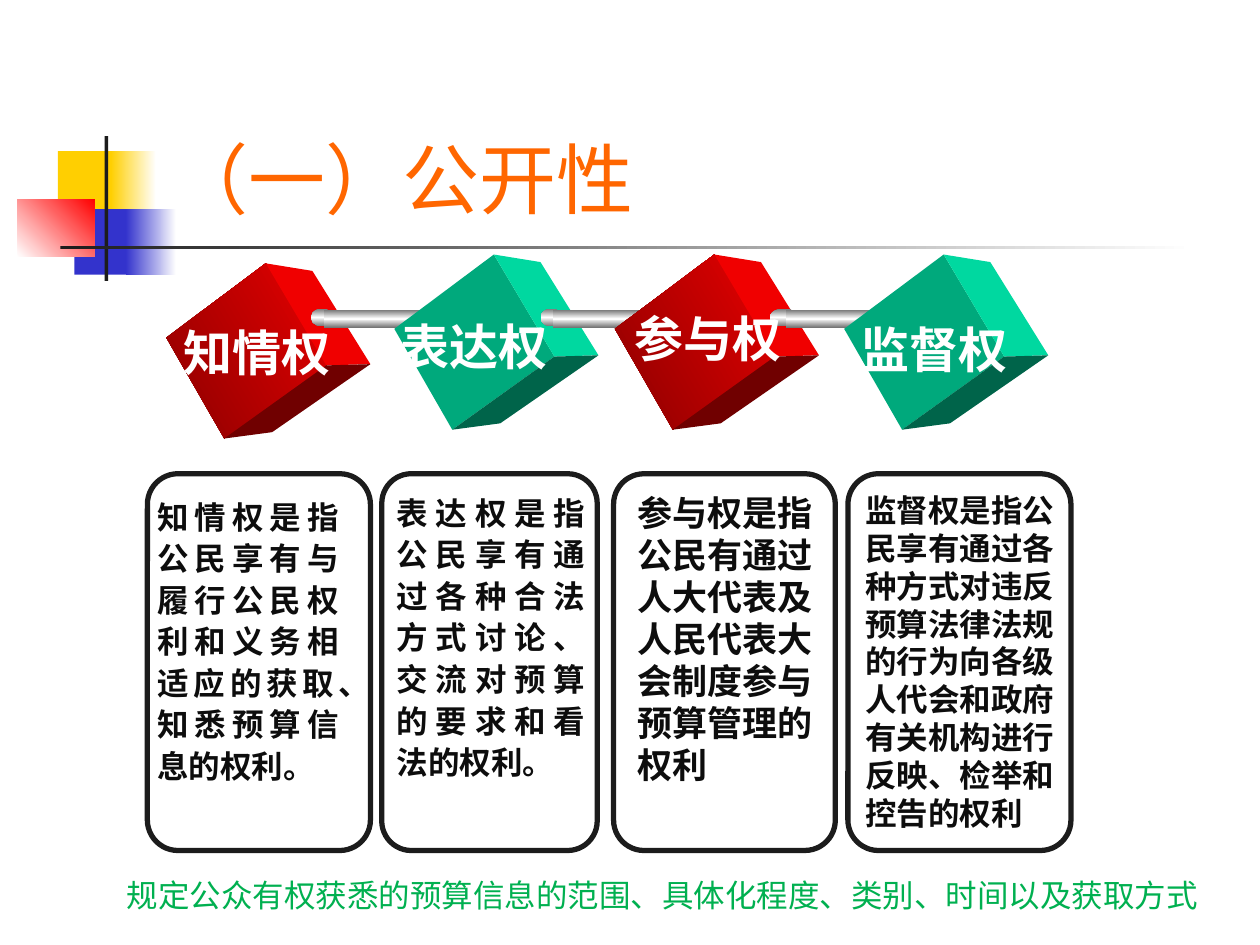
from copy import deepcopy

from pptx import Presentation
from pptx.dml.color import RGBColor
from pptx.enum.shapes import MSO_SHAPE
from pptx.enum.text import MSO_ANCHOR, PP_ALIGN
from pptx.oxml.ns import qn
from pptx.util import Inches, Pt

RECT, OVAL, ROUND = MSO_SHAPE.RECTANGLE, MSO_SHAPE.OVAL, MSO_SHAPE.ROUNDED_RECTANGLE
TOP, BOTTOM = MSO_ANCHOR.TOP, MSO_ANCHOR.BOTTOM
LEFT, JUSTIFY = PP_ALIGN.LEFT, PP_ALIGN.JUSTIFY

COLORS = {
    "white": "FFFFFF", "ink": "1C1C1C", "body": "0D0D0D", "title": "FF6600",
    "note": "00B050", "yellow": "FFCF01", "blue": "3333CC", "red": "FF0000",
    "steel": "767676", "tip": "B6B6B6",
    "red_dark": "8C0000", "red_front": "E60000", "red_side": "F00000", "red_base": "700000",
    "green_front": "00A97C", "green_side": "00D8A0", "green_base": "00644A",
}
FACES = {
    "front": [(0, 0), (0.79, -0.59), (1.27, 0.22), (0.46, 0.8)],
    "side": [(0.79, -0.59), (1.16, -0.53), (1.62, 0.21), (1.27, 0.22)],
    "base": [(1.27, 0.22), (1.62, 0.21), (0.84, 0.75), (0.46, 0.8)],
}
RED_CUBE = {"front": ["red_dark", "red_front"], "side": ["red_side"], "base": ["red_base"]}
GREEN_CUBE = {"front": ["green_front"], "side": ["green_side"], "base": ["green_base"]}
STEEL = ["steel", "white", "steel"]
TIP = ["tip", "white", "tip"]

CUBES = [
    (1.32, 2.68, RED_CUBE), (3.13, 2.61, GREEN_CUBE),
    (4.88, 2.61, RED_CUBE), (6.7, 2.61, GREEN_CUBE),
]
RODS = [(2.47, 0.99, 1), (4.29, 0.99, 1), (6.11, 1.3, 1.3)]
LABELS = [
    ("知情权", 1.36, 2.51), ("表达权", 3.08, 2.46),
    ("参与权", 4.94, 2.4), ("监督权", 6.73, 2.49),
]
PANELS = [(1.17, 1.77), (3.03, 1.71), (4.87, 1.76), (6.73, 1.77)]
JUSTIFIED = {"size": 18, "align": JUSTIFY, "spacing": 1.1, "before": 6}
RIGHTS = [
    ("知情权是指公民享有与履行公民权利和义务相适应的获取、知悉预算信息的权利。",
     (1.15, 3.87, 1.64, 2.4), JUSTIFIED),
    ("表达权是指公民享有通过各种合法方式讨论、 交流对预算的要求和看法的权利。",
     (3.05, 3.84, 1.69, 2.43), JUSTIFIED),
    ("参与权是指公民有通过人大代表及人民代表大会制度参与预算管理的权利",
     (4.96, 3.85, 1.62, 2.46), {"size": 20}),
    ("监督权是指公民享有通过各种方式对违反预算法律法规的行为向各级人代会和政府有关机构进行反映、检举和控告的权利",
     (6.77, 3.85, 1.93, 2.83), {"size": 18}),
]


def rgb(name):
    """Return the named colour."""
    return RGBColor.from_string(COLORS[name])


def paint(sp, names, angle=0):
    """Fill a shape with one colour or an even gradient, without a line."""
    sp.shadow.inherit = False
    sp.line.fill.background()
    if len(names) == 1:
        sp.fill.solid()
        sp.fill.fore_color.rgb = rgb(names[0])
        return
    sp.fill.gradient()
    sp.fill.gradient_angle = angle
    stop_list = sp._element.spPr.find(".//" + qn("a:gsLst"))
    while len(stop_list) < len(names):
        stop_list.append(deepcopy(stop_list[0]))
    for i, (stop, name) in enumerate(zip(sp.fill.gradient_stops, names)):
        stop.position = i / (len(names) - 1)
        stop.color.rgb = rgb(name)


def add_block(s, kind, box, names, angle=0):
    """Add a filled preset shape."""
    sp = s.shapes.add_shape(kind, *map(Inches, box))
    paint(sp, names, angle)
    return sp


def add_text(s, text, box, size=18, color="body", font="Arial", bold=False,
             align=LEFT, anchor=TOP, spacing=None, before=0, wrap=True):
    """Add a text box with one formatted paragraph."""
    tf = s.shapes.add_textbox(*map(Inches, box)).text_frame
    tf.word_wrap = wrap
    tf.vertical_anchor = anchor
    p = tf.paragraphs[0]
    p.alignment = align
    p.line_spacing = spacing
    p.space_before = Pt(before)
    r = p.add_run()
    r.text = text
    r.font.name = font
    r.font.size = Pt(size)
    r.font.bold = bold
    r.font.color.rgb = rgb(color)


def add_ornament(s):
    """Add the coloured squares and the two bars beside the title."""
    add_block(s, RECT, (0.46, 1.2, 0.48, 0.52), ["yellow"])
    add_block(s, RECT, (0.88, 1.2, 0.36, 0.52), ["yellow", "white"])
    add_block(s, RECT, (0.59, 1.66, 0.46, 0.52), ["blue"])
    add_block(s, RECT, (1, 1.66, 0.4, 0.52), ["blue", "white"])
    add_block(s, RECT, (0.14, 1.58, 0.61, 0.46), ["white", "red"], 45)
    add_block(s, RECT, (0.83, 1.08, 0.03, 1.15), ["ink"])
    add_block(s, RECT, (0.48, 1.95, 9, 0.03), ["ink", "white"])


def add_panel(s, left, width):
    """Add an outlined rounded panel."""
    sp = s.shapes.add_shape(ROUND, Inches(left), Inches(3.76), Inches(width), Inches(2.99))
    sp.shadow.inherit = False
    sp.adjustments[0] = 0.137
    sp.fill.background()
    sp.line.color.rgb = rgb("ink")
    sp.line.width = Pt(3)


def add_cube(s, left, top, palette):
    """Add a tilted cube whose left corner is at the given point."""
    for face, corners in FACES.items():
        points = [(Inches(left + x), Inches(top + y)) for x, y in corners]
        builder = s.shapes.build_freeform(*points[0], scale=1.0)
        builder.add_line_segments(points[1:], close=True)
        paint(builder.convert_to_shape(), palette[face], 30)


def add_rod(s, left, length, stretch):
    """Add a metal rod with round ends."""
    end = left + length
    add_block(s, OVAL, (left, 2.45, 0.17 * stretch, 0.14), STEEL, 90)
    add_block(s, RECT, (left + 0.1 * stretch, 2.46, 0.82 * stretch, 0.14), STEEL, 90)
    sp = add_block(s, OVAL, (end - 0.15 * stretch, 2.46, 0.15 * stretch, 0.13), TIP, 90)
    sp.line.color.rgb = rgb("white")
    sp.line.width = Pt(1)
    add_block(s, OVAL, (end - 0.07 * stretch, 2.5, 0.04 * stretch, 0.04), TIP, 90)


def main():
    """Build the slide and save it."""
    prs = Presentation()
    prs.slide_width, prs.slide_height = Inches(10), Inches(7.5)
    s = prs.slides.add_slide(prs.slide_layouts[6])
    add_ornament(s)
    add_text(s, "（一）公开性", (1.26, 0.23, 8.52, 1.6), size=44, color="title",
             font="Cabin", anchor=BOTTOM)
    for left, width in PANELS:
        add_panel(s, left, width)
    for i, cube in enumerate(CUBES):
        add_cube(s, *cube)
        if i < len(RODS):
            add_rod(s, *RODS[i])
    for text, left, top in LABELS:
        add_text(s, text, (left, top, 1.39, 0.57), size=28, color="white", bold=True, wrap=False)
    for text, box, style in RIGHTS:
        add_text(s, text, box, bold=True, **style)
    add_text(s, "规定公众有权获悉的预算信息的范围、具体化程度、类别、时间以及获取方式",
             (0.91, 6.9, 8.74, 0.4), color="note", font="Noto Sans CJK SC")
    prs.save("out.pptx")


if __name__ == "__main__":
    main()
